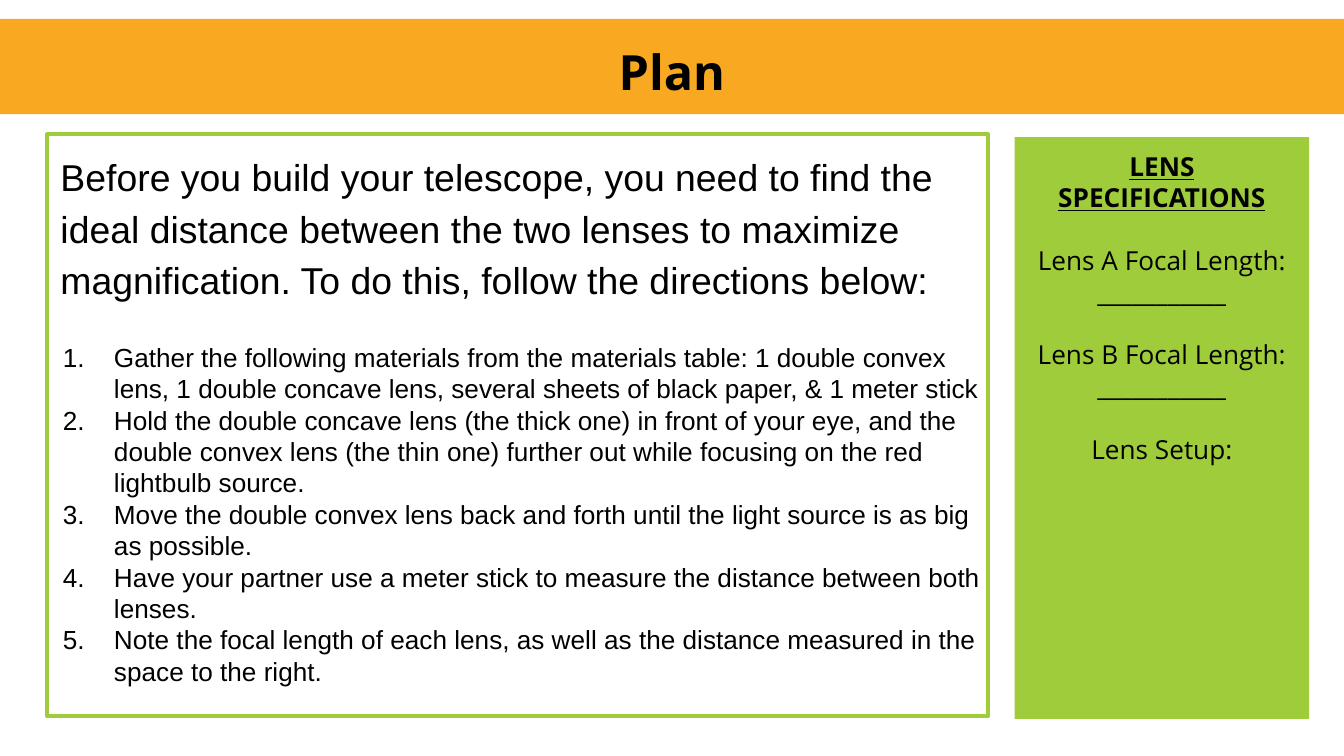
import pptx
import pptx.util
import pptx.dml.color
import pptx.enum.shapes
import pptx.enum.text
import lxml.etree

Inches = pptx.util.Inches
Pt = pptx.util.Pt
RGBColor = pptx.dml.color.RGBColor
ALIGN = pptx.enum.text.PP_ALIGN
ANCHOR = pptx.enum.text.MSO_ANCHOR

BLACK = RGBColor(0x00, 0x00, 0x00)
ORANGE = RGBColor(0xF8, 0xA8, 0x21)
GREEN = RGBColor(0x9F, 0xCC, 0x3A)

HEADING = "Plan"
INTRO = ("Before you build your telescope, you need to find the ideal distance "
         "between the two lenses to maximize magnification. To do this, follow "
         "the directions below:")
STEPS = [
    "Gather the following materials from the materials table: 1 double convex "
    "lens, 1 double concave lens, several sheets of black paper, & 1 meter stick",
    "Hold the double concave lens (the thick one) in front of your eye, and the "
    "double convex lens (the thin one) further out while focusing on the red "
    "lightbulb source.",
    "Move the double convex lens back and forth until the light source is as big "
    "as possible.",
    "Have your partner use a meter stick to measure the distance between both "
    "lenses.",
    "Note the focal length of each lens, as well as the distance measured in the "
    "space to the right.",
]
PANEL_HEADING = "LENS SPECIFICATIONS"
BLANK = "___________"
PANEL_GROUPS = [
    ["Lens A Focal Length:", BLANK],
    ["Lens B Focal Length:", BLANK],
    ["Lens Setup:"],
]

SLIDE_WIDTH = 10
SLIDE_HEIGHT = SLIDE_WIDTH * 9 / 16
INTRO_BOX = (0.35, 1, 7, 4.33)
BANNER_BOX = (0, 0.14, SLIDE_WIDTH, 0.71)
PANEL_BOX = (7.55, 1.02, 2.19, 4.33)
STEPS_BOX = (0.37, 2.49, 7.07, 2.69)
STEP_INDENT = 0.38
GROUP_GAP = 16.8


def add_text(tf, text, font="Arial", size=14, bold=False, underline=False,
             align=ALIGN.LEFT, spacing=1.0, before=0):
    p = tf.paragraphs[0]
    if p.runs:
        p = tf.add_paragraph()
    p.alignment = align
    p.line_spacing = spacing
    p.space_before = Pt(before)
    r = p.add_run()
    r.text = text
    r.font.name = font
    r.font.size = Pt(size)
    r.font.bold = bold
    r.font.underline = underline
    r.font.color.rgb = BLACK
    return p


def number(p, indent):
    pPr = p._p.get_or_add_pPr()
    pPr.set("marL", str(Inches(indent)))
    pPr.set("indent", str(-Inches(indent)))
    bullet = lxml.etree.SubElement(pPr, pptx.oxml.ns.qn("a:buAutoNum"))
    bullet.set("type", "arabicPeriod")


def set_frame(tf, inset, anchor=ANCHOR.TOP):
    tf.word_wrap = True
    tf.auto_size = pptx.enum.text.MSO_AUTO_SIZE.NONE
    tf.vertical_anchor = anchor
    tf.margin_left = tf.margin_right = Inches(0.1)
    tf.margin_top = tf.margin_bottom = Inches(inset)
    return tf


def add_block(s, box, color, anchor=ANCHOR.TOP):
    sp = s.shapes.add_shape(pptx.enum.shapes.MSO_SHAPE.RECTANGLE,
                            *map(Inches, box))
    sp.shadow.inherit = False
    sp.fill.solid()
    sp.fill.fore_color.rgb = color
    sp.line.fill.background()
    return set_frame(sp.text_frame, 0.1, anchor)


def main():
    prs = pptx.Presentation()
    prs.slide_width = Inches(SLIDE_WIDTH)
    prs.slide_height = Inches(SLIDE_HEIGHT)
    s = prs.slides.add_slide(prs.slide_layouts[5])

    intro = s.shapes.title
    intro.left, intro.top, intro.width, intro.height = map(Inches, INTRO_BOX)
    intro.line.color.rgb = GREEN
    intro.line.width = Pt(2.25)
    add_text(set_frame(intro.text_frame, 0.1), INTRO, size=20, spacing=1.15)

    tf = add_block(s, BANNER_BOX, ORANGE, ANCHOR.MIDDLE)
    add_text(tf, HEADING, font="Open Sans", size=26, bold=True,
             align=ALIGN.CENTER, spacing=1.15)

    tf = add_block(s, PANEL_BOX, GREEN)
    add_text(tf, PANEL_HEADING, font="Open Sans", bold=True, underline=True,
             align=ALIGN.CENTER)
    for group in PANEL_GROUPS:
        for i, line in enumerate(group):
            add_text(tf, line, font="Open Sans", align=ALIGN.CENTER,
                     before=0 if i else GROUP_GAP)

    steps = s.shapes.add_textbox(*map(Inches, STEPS_BOX))
    tf = set_frame(steps.text_frame, 0.05)
    for step in STEPS:
        number(add_text(tf, step), STEP_INDENT)

    prs.save("out.pptx")


if __name__ == "__main__":
    main()
